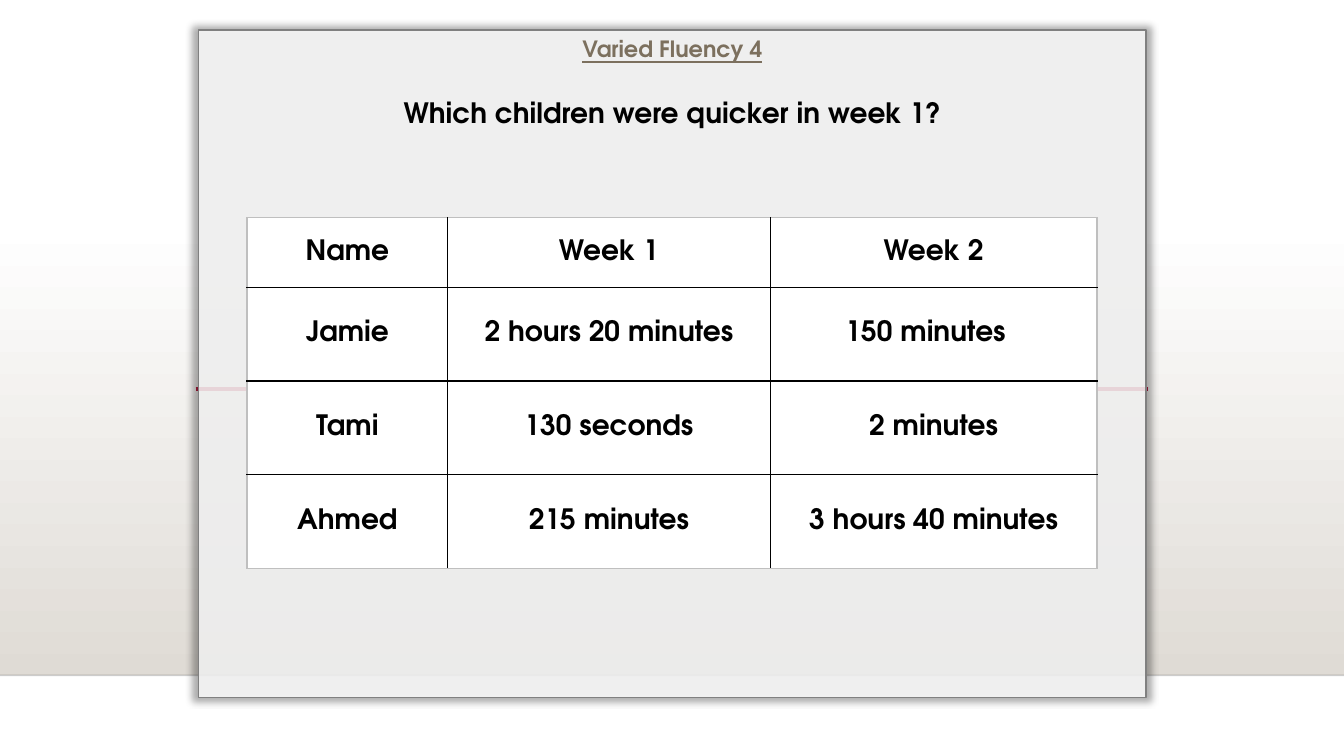
from dataclasses import dataclass

from lxml import etree
from pptx import Presentation
from pptx.dml.color import RGBColor
from pptx.enum.shapes import MSO_CONNECTOR, MSO_SHAPE
from pptx.enum.text import MSO_ANCHOR, PP_ALIGN
from pptx.oxml.ns import qn
from pptx.util import Emu, Pt

RECT = MSO_SHAPE.RECTANGLE
STRAIGHT = MSO_CONNECTOR.STRAIGHT
MIDDLE = MSO_ANCHOR.MIDDLE
CENTER = PP_ALIGN.CENTER
SCALE = 9144  # EMU in one px, 100 px to the inch


@dataclass(frozen=True)
class Theme:
    font: str = "TeX Gyre Adventor"
    white: str = "FFFFFF"
    black: str = "000000"
    sand: str = "DFDBD5"
    taupe: str = "7C705E"
    red: str = "B71E42"
    gray: str = "808080"
    edge: str = "BFBFBF"
    small: int = 16
    large: int = 20


@dataclass(frozen=True)
class Box:
    left: int
    top: int
    width: int
    height: int

    def emu(self) -> list[Emu]:
        return [px(n) for n in (self.left, self.top, self.width, self.height)]


@dataclass(frozen=True)
class Rule:
    start: int
    end: int
    y: int
    color: str
    width: float
    alpha: int = 100


THEME = Theme()
FLOOR = Box(0, 221, 1333, 449)
PANEL = Box(197, 30, 940, 662)
HEAD = Box(197, 35, 940, 27)
ASK = Box(197, 95, 940, 33)
GRID = Box(245, 216, 843, 348)
RULES = [
    Rule(0, 1333, 670, THEME.black, 1, 20),
    Rule(194, 1139, 386, THEME.red, 2.5),
]
COLS = [199, 320, 324]
ROWS = [69, 93, 93, 93]
TIMES = [
    ["Name", "Week 1", "Week 2"],
    ["Jamie", "2 hours 20 minutes", "150 minutes"],
    ["Tami", "130 seconds", "2 minutes"],
    ["Ahmed", "215 minutes", "3 hours 40 minutes"],
]
NUDGE = {(1, 2): 26}  # wider right margin, in px


def px(n: int) -> Emu:
    return Emu(n * SCALE)


def rgb(code: str) -> RGBColor:
    return RGBColor.from_string(code)


def add(parent, tag: str, **attrs):
    return etree.SubElement(parent, qn(tag), {k: str(v) for k, v in attrs.items()})


def fade(parent, alpha: int) -> None:
    """Set the opacity of the solid colour in parent."""
    add(parent.find(".//" + qn("a:srgbClr")), "a:alpha", val=alpha * 1000)


def write(frame, text: str, size: int, color: str, under: bool = False) -> None:
    frame.text = text
    para = frame.paragraphs[0]
    para.alignment = CENTER
    look = {"name": THEME.font, "size": Pt(size), "bold": True, "underline": under}
    font = para.runs[0].font
    for key, value in look.items():
        setattr(font, key, value)
    font.color.rgb = rgb(color)


def fit(frame) -> None:
    look = {"margin_left": 0, "margin_right": 0, "margin_top": 0,
            "margin_bottom": 0, "word_wrap": True, "vertical_anchor": MIDDLE}
    for key, value in look.items():
        setattr(frame, key, value)


def draw_floor(shapes) -> None:
    floor = shapes.add_shape(RECT, *FLOOR.emu())
    floor.shadow.inherit = False
    floor.line.fill.background()
    floor.fill.gradient()
    floor.fill.gradient_angle = 270
    for stop, color in zip(floor.fill.gradient_stops, (THEME.white, THEME.sand)):
        stop.color.rgb = rgb(color)


def draw_rule(shapes, rule: Rule) -> None:
    y = px(rule.y)
    line = shapes.add_connector(STRAIGHT, px(rule.start), y, px(rule.end), y)
    line.line.color.rgb = rgb(rule.color)
    line.line.width = Pt(rule.width)
    props = line._element.spPr
    if rule.alpha < 100:
        fade(props, rule.alpha)
    add(props, "a:effectLst")


def draw_panel(shapes) -> None:
    panel = shapes.add_shape(RECT, *PANEL.emu())
    panel.shadow.inherit = False
    panel.fill.solid()
    panel.fill.fore_color.rgb = rgb(THEME.white)
    props = panel._element.spPr
    fade(props.find(qn("a:solidFill")), 82)
    panel.line.color.rgb = rgb(THEME.gray)
    panel.line.width = Pt(1.25)
    glow = add(props.find(qn("a:effectLst")), "a:outerShdw",
               blurRad=Pt(5), dist=0, dir=0, sx=101000, sy=101000,
               algn="ctr", rotWithShape=0)
    add(add(glow, "a:srgbClr", val=THEME.black), "a:alpha", val=40000)


def draw_text(slide) -> None:
    head = slide.shapes.title
    head.left, head.top, head.width, head.height = HEAD.emu()
    slide.shapes._spTree.append(head._element)  # in front of the panel
    fit(head.text_frame)
    write(head.text_frame, "Varied Fluency 4", THEME.small, THEME.taupe, True)
    ask = slide.shapes.add_textbox(*ASK.emu()).text_frame
    fit(ask)
    write(ask, "Which children were quicker in week 1?", THEME.large, THEME.black)


def edge(cell, side: str, outer: bool) -> None:
    line = add(cell._tc.get_or_add_tcPr(), "a:" + side, w=Pt(1))
    color = THEME.edge if outer else THEME.black
    add(add(line, "a:solidFill"), "a:srgbClr", val=color)


def draw_table(shapes) -> None:
    table = shapes.add_table(len(ROWS), len(COLS), *GRID.emu()).table
    table.first_row = table.horz_banding = False
    for col, width in zip(table.columns, COLS):
        col.width = px(width)
    for row, height in zip(table.rows, ROWS):
        row.height = px(height)
    for r, names in enumerate(TIMES):
        for c, text in enumerate(names):
            cell = table.cell(r, c)
            cell.vertical_anchor = MIDDLE
            cell.margin_right = px(NUDGE.get((r, c), 10))
            write(cell.text_frame, text, THEME.large, THEME.black)
            # Borders come before the fill
            sides = {"lnL": c == 0, "lnR": c == len(COLS) - 1,
                     "lnT": r == 0, "lnB": r == len(ROWS) - 1}
            for side, outer in sides.items():
                edge(cell, side, outer)
            cell.fill.solid()
            cell.fill.fore_color.rgb = rgb(THEME.white)


def main() -> None:
    deck = Presentation()
    deck.slide_width, deck.slide_height = px(1333), px(750)
    slide = deck.slides.add_slide(deck.slide_layouts[5])
    # Backdrop
    draw_floor(slide.shapes)
    for rule in RULES:
        draw_rule(slide.shapes, rule)
    # Content
    draw_panel(slide.shapes)
    draw_text(slide)
    draw_table(slide.shapes)
    deck.save("out.pptx")


if __name__ == "__main__":
    main()
